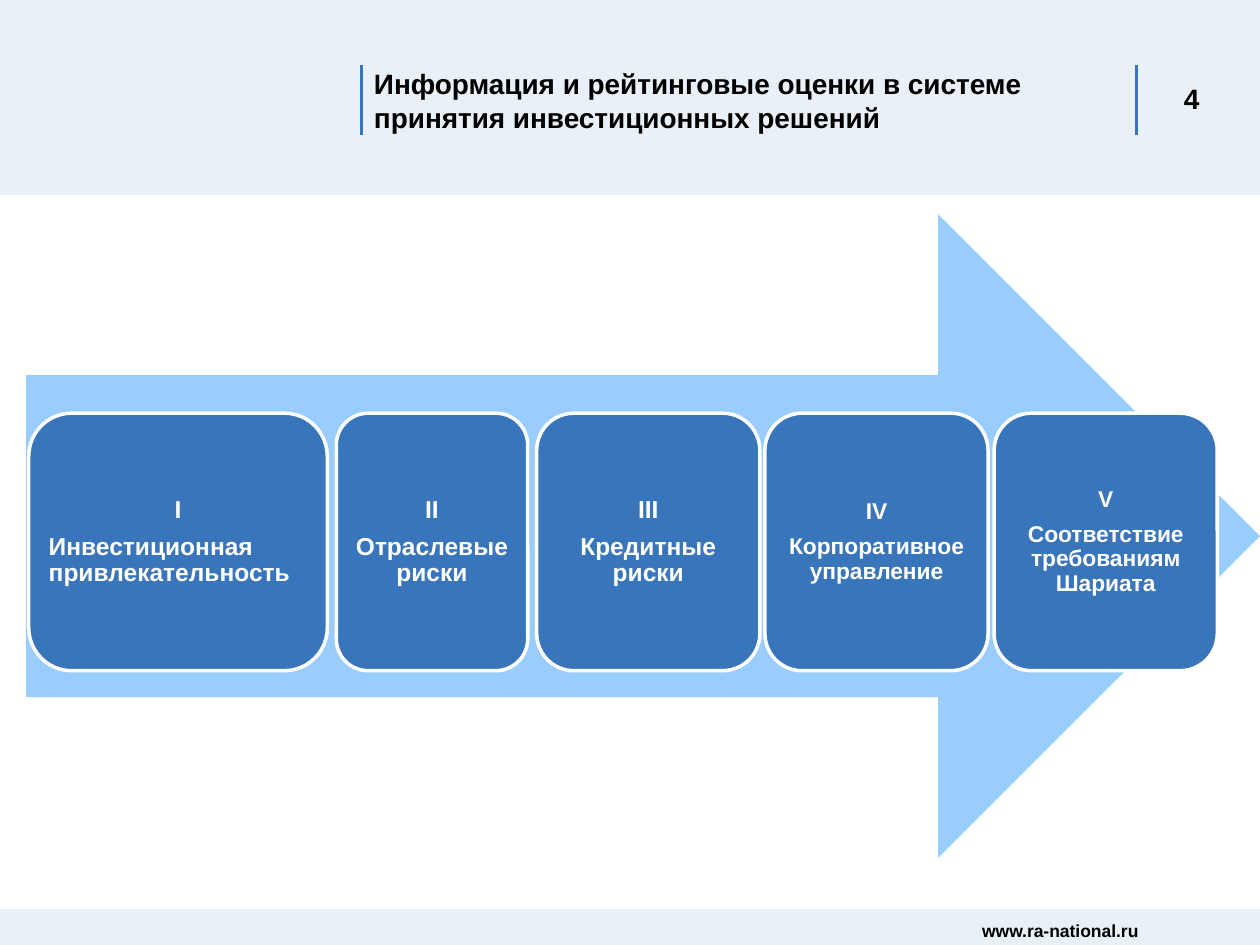
from dataclasses import dataclass

from lxml import etree
from pptx import Presentation
from pptx.dml.color import RGBColor
from pptx.enum.shapes import MSO_CONNECTOR, MSO_SHAPE
from pptx.enum.text import MSO_ANCHOR, PP_ALIGN
from pptx.oxml.ns import qn
from pptx.util import Cm, Pt


@dataclass(frozen=True)
class Theme:
    font: str = "Arial"
    blue: RGBColor = RGBColor(0x39, 0x75, 0xBA)
    sky: RGBColor = RGBColor(0x99, 0xCC, 0xFF)
    white: RGBColor = RGBColor(0xFF, 0xFF, 0xFF)
    black: RGBColor = RGBColor(0, 0, 0)
    title: float = 16
    card: float = 14
    card_small: float = 13
    footer: float = 10
    band_opacity: int = 10


THEME = Theme()

CARDS = [
    (0.05, 6.02, "I", "Инвестиционная привлекательность", THEME.card, PP_ALIGN.JUSTIFY),
    (6.25, 3.86, "II", "Отраслевые риски", THEME.card, PP_ALIGN.CENTER),
    (10.29, 4.5, "III", "Кредитные риски", THEME.card, PP_ALIGN.CENTER),
    (14.89, 4.5, "IV", "Корпоративное управление", THEME.card_small, PP_ALIGN.CENTER),
    (19.51, 4.5, "V", "Соответствие требованиям Шариата", THEME.card_small, PP_ALIGN.CENTER),
]


def add_block(slide, kind, x, y, w, h, color):
    sp = slide.shapes.add_shape(kind, Cm(x), Cm(y), Cm(w), Cm(h))
    sp.shadow.inherit = False
    sp.fill.solid()
    sp.fill.fore_color.rgb = color
    sp.line.fill.background()
    return sp


def add_band(slide, x, y, w, h):
    sp = add_block(slide, MSO_SHAPE.RECTANGLE, x, y, w, h, THEME.blue)
    clr = sp.fill._xPr.find(qn("a:solidFill"))[0]
    etree.SubElement(clr, qn("a:alpha"), val=str(THEME.band_opacity * 1000))


def add_rule(slide, x, y, h):
    line = slide.shapes.add_connector(MSO_CONNECTOR.STRAIGHT, Cm(x), Cm(y), Cm(x), Cm(y + h))
    line.line.color.rgb = THEME.blue
    line.line.width = Pt(1.5)
    etree.SubElement(line._element.spPr, qn("a:effectLst"))


def add_run(p, text, size, color, align):
    p.alignment = align
    r = p.add_run()
    r.text = text
    r.font.name = THEME.font
    r.font.size = Pt(size)
    r.font.bold = True
    r.font.color.rgb = color


def add_label(slide, x, y, w, h, text, size, align):
    tf = slide.shapes.add_textbox(Cm(x), Cm(y), Cm(w), Cm(h)).text_frame
    tf.word_wrap = True
    tf.vertical_anchor = MSO_ANCHOR.MIDDLE
    add_run(tf.paragraphs[0], text, size, THEME.black, align)


def add_card(slide, x, y, w, h, numeral, caption, size, align):
    sp = add_block(slide, MSO_SHAPE.ROUNDED_RECTANGLE, x, y, w, h, THEME.blue)
    sp.line.color.rgb = THEME.white
    sp.line.width = Pt(2)
    tf = sp.text_frame
    tf.word_wrap = True
    tf.vertical_anchor = MSO_ANCHOR.MIDDLE
    tf.margin_left = tf.margin_right = tf.margin_top = tf.margin_bottom = Cm(0.15)
    add_run(tf.paragraphs[0], numeral, size, THEME.white, PP_ALIGN.CENTER)
    add_run(tf.add_paragraph(), caption, size, THEME.white, align)
    for p in tf.paragraphs:
        p.line_spacing = 0.9
        p.space_after = Pt(6)


def add_header(slide, x, y, w, h):
    add_band(slide, x, y, w, h)
    top, height = y + 1.32, 1.4
    title_x, number_x = x + 7.29, x + 22.91
    for rule_x in (title_x, number_x):
        add_rule(slide, rule_x, top, height)
    add_label(slide, title_x, top, 15.01, height,
              "Информация и рейтинговые оценки в системе принятия инвестиционных решений",
              THEME.title, PP_ALIGN.LEFT)
    add_label(slide, number_x, top, 1.52, 1.32, "4", THEME.title, PP_ALIGN.RIGHT)


def add_process(slide, x, y, w, h):
    add_block(slide, MSO_SHAPE.RIGHT_ARROW, x, y, w, h, THEME.sky)
    card_h = 0.4 * h
    for dx, card_w, *content in CARDS:
        add_card(slide, x + dx, y + 4.01, card_w, card_h, *content)


def add_footer(slide, x, y, w, h):
    add_band(slide, x, y, w, h)
    add_label(slide, x + 17.35, y + 0.15, 8.05, 0.56, "www.ra-national.ru",
              THEME.footer, PP_ALIGN.CENTER)


def main():
    prs = Presentation()
    prs.slide_width, prs.slide_height = Cm(25.4), Cm(19.05)
    slide = prs.slides.add_slide(prs.slide_layouts[6])
    add_header(slide, 0, 0, 25.4, 3.93)
    add_footer(slide, 0, 18.33, 25.4, 0.72)
    add_process(slide, 0.53, 4.32, 24.87, 12.98)
    prs.save("out.pptx")


if __name__ == "__main__":
    main()
